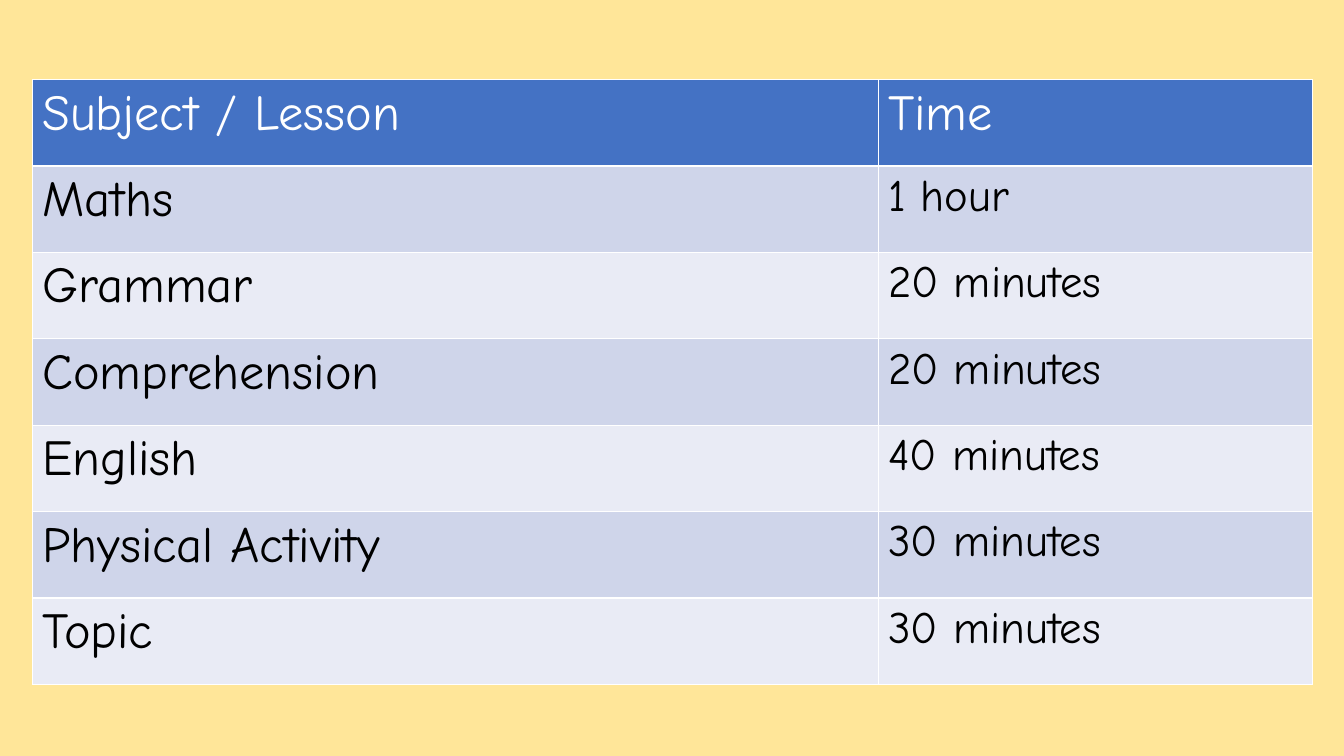
from pptx import Presentation
from pptx.dml.color import RGBColor
from pptx.util import Inches, Pt

CREAM = RGBColor(0xFF, 0xE6, 0x99)
BLUE = RGBColor(0x44, 0x72, 0xC4)
BAND_DARK = RGBColor(0xCF, 0xD5, 0xEA)
BAND_LIGHT = RGBColor(0xE9, 0xEB, 0xF5)
WHITE = RGBColor(0xFF, 0xFF, 0xFF)
BLACK = RGBColor(0, 0, 0)
FONT = "Comic Neue"

TIMETABLE = [
    ("Subject / Lesson", "Time"),
    ("Maths", "1 hour"),
    ("Grammar", "20 minutes"),
    ("Comprehension", "20 minutes"),
    ("English", "40 minutes"),
    ("Physical Activity", "30 minutes"),
    ("Topic", "30 minutes"),
]

prs = Presentation()
prs.slide_width = Inches(13.33)
prs.slide_height = Inches(7.5)
s = prs.slides.add_slide(prs.slide_layouts[6])
s.background.fill.solid()
s.background.fill.fore_color.rgb = CREAM

# The default table style supplies the white cell borders
table = s.shapes.add_table(
    len(TIMETABLE), 2, Inches(0.32), Inches(0.79), Inches(12.7), Inches(6)
).table
table.columns[0].width = Inches(8.39)
table.columns[1].width = Inches(4.31)

for row, texts in enumerate(TIMETABLE):
    is_header = row == 0
    band = BAND_DARK if row % 2 else BAND_LIGHT
    for col, text in enumerate(texts):
        cell = table.cell(row, col)
        cell.fill.solid()
        cell.fill.fore_color.rgb = BLUE if is_header else band
        cell.text = text
        font = cell.text_frame.paragraphs[0].font
        font.name = FONT
        font.size = Pt(36 if is_header or col == 0 else 32)
        font.bold = False
        font.color.rgb = WHITE if is_header else BLACK

prs.save("out.pptx")
